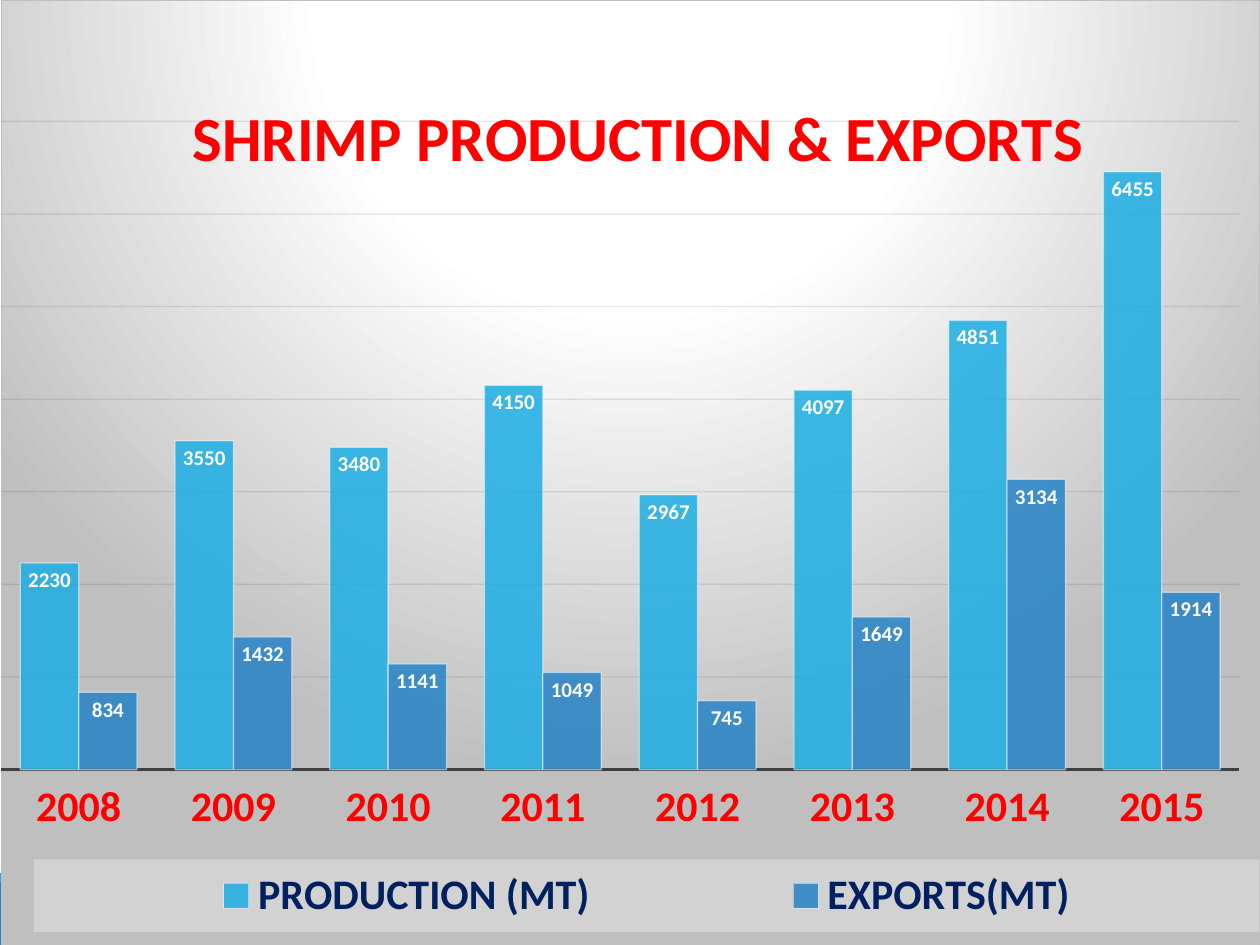
from pptx import Presentation
from pptx.chart.data import CategoryChartData
from pptx.dml.color import RGBColor
from pptx.enum.chart import (XL_CHART_TYPE, XL_LABEL_POSITION, XL_LEGEND_POSITION,
                             XL_TICK_LABEL_POSITION, XL_TICK_MARK)
from pptx.enum.shapes import MSO_SHAPE
from pptx.oxml import parse_xml
from pptx.oxml.ns import nsdecls
from pptx.util import Emu, Pt

COLUMN = XL_CHART_TYPE.COLUMN_CLUSTERED
INSIDE_END = XL_LABEL_POSITION.INSIDE_END
BOTTOM = XL_LEGEND_POSITION.BOTTOM
LOW = XL_TICK_LABEL_POSITION.LOW
NO_TICK = XL_TICK_MARK.NONE
RECTANGLE = MSO_SHAPE.RECTANGLE

BLACK = RGBColor(0x00, 0x00, 0x00)
WHITE = RGBColor(0xFF, 0xFF, 0xFF)
RED = RGBColor(0xFF, 0x00, 0x00)
NAVY = RGBColor(0x00, 0x20, 0x60)
CYAN = RGBColor(0x1C, 0xAD, 0xE4)
BLUE = RGBColor(0x26, 0x83, 0xC6)
AXIS_GRAY = RGBColor(0x40, 0x40, 0x40)
GRID_GRAY = RGBColor(0x0D, 0x0D, 0x0D)

FONT = "Calibri"
WIDTH, HEIGHT = 1260, 945
EMU_PER_INCH, PX_PER_INCH = 914400, 126
YEARS = [str(year) for year in range(2008, 2016)]
SERIES = [
    ("PRODUCTION (MT)", CYAN, [2230, 3550, 3480, 4150, 2967, 4097, 4851, 6455]),
    ("EXPORTS(MT)", BLUE, [834, 1432, 1141, 1049, 745, 1649, 3134, 1914]),
]


def px(length):
    """Turn pixels into EMU."""
    return Emu(round(length * EMU_PER_INCH / PX_PER_INCH))


def style_font(font, size, color, bold=True):
    """Set typeface, size, colour and weight."""
    font.name = FONT
    font.size = Pt(size)
    font.bold = bold
    font.color.rgb = color


def style_line(line, color, width):
    """Give a line a colour and a width in points."""
    line.color.rgb = color
    line.width = Pt(width)


def set_alpha(chart, query, percent):
    """Make the solid colours found under a query partly transparent."""
    for color in chart.element.xpath(f"{query}/a:solidFill/a:srgbClr"):
        color.append(parse_xml(f'<a:alpha {nsdecls("a")} val="{percent * 1000}"/>'))


def place_part(parent, anchor_tag, left, top, width=None, height=None, inner=False):
    """Fix the place of a chart part, given in px."""
    for layout in parent.xpath("c:layout"):
        parent.remove(layout)
    target = '<c:layoutTarget val="inner"/>' if inner else ""
    places = f'<c:x val="{left / WIDTH:.3f}"/><c:y val="{top / HEIGHT:.3f}"/>'
    if width:
        places += f'<c:w val="{width / WIDTH:.3f}"/><c:h val="{height / HEIGHT:.3f}"/>'
    parent.xpath(anchor_tag)[0].addprevious(parse_xml(
        f'<c:layout {nsdecls("c")}><c:manualLayout>{target}'
        f'<c:xMode val="edge"/><c:yMode val="edge"/>{places}'
        "</c:manualLayout></c:layout>"))


def add_bar(slide, top, height, color):
    """Add a full-width band at the foot of the slide."""
    shape = slide.shapes.add_shape(RECTANGLE, 0, px(top), px(WIDTH), px(height))
    shape.shadow.inherit = False
    shape.fill.solid()
    shape.fill.fore_color.rgb = color
    shape.line.fill.background()


def add_chart(slide):
    """Add the clustered column chart with its data."""
    data = CategoryChartData()
    data.categories = YEARS
    for name, _, values in SERIES:
        data.add_series(name, values)
    frame = slide.shapes.add_chart(COLUMN, 0, 0, px(WIDTH), px(HEIGHT), data)
    style_font(frame.chart.font, 10, BLACK, bold=False)
    return frame.chart


def style_background(chart):
    """Fill the chart area with a round gradient and a thin border."""
    stops = "".join(
        f'<a:gs pos="{position * 1000}"><a:srgbClr val="{color}"/></a:gs>'
        for position, color in ((0, "FFFFFF"), (39, "FFFFFF"), (100, "BFBFBF")))
    chart.element.xpath("c:chart")[0].addnext(parse_xml(
        f'<c:spPr {nsdecls("c", "a")}><a:gradFill><a:gsLst>{stops}</a:gsLst>'
        '<a:path path="circle">'
        '<a:fillToRect l="50000" t="-80000" r="50000" b="180000"/></a:path>'
        '</a:gradFill><a:ln w="9525"><a:solidFill><a:srgbClr val="BFBFBF"/>'
        "</a:solidFill></a:ln></c:spPr>"))


def style_title(chart):
    """Write the chart title over the plot."""
    chart.has_title = True
    run = chart.chart_title.text_frame.paragraphs[0].add_run()
    run.text = "SHRIMP PRODUCTION & EXPORTS"
    style_font(run.font, 36, RED)
    place_part(chart.element.xpath("c:chart/c:title")[0], "c:overlay", 180, 82)


def style_axes(chart):
    """Format the years, hide the values and draw faint gridlines."""
    years = chart.category_axis
    years.major_tick_mark = years.minor_tick_mark = NO_TICK
    years.tick_label_position = LOW
    style_font(years.tick_labels.font, 24, RED)
    style_line(years.format.line, AXIS_GRAY, 1.5)
    values = chart.value_axis
    values.visible = False
    values.minimum_scale, values.maximum_scale, values.major_unit = 0, 7000, 1000
    values.has_major_gridlines = True
    style_line(values.major_gridlines.format.line, GRID_GRAY, 0.75)
    set_alpha(chart, ".//c:majorGridlines/c:spPr/a:ln", 10)


def style_columns(chart):
    """Format the columns and their value labels."""
    plot = chart.plots[0]
    plot.gap_width = 65
    plot.overlap = 0
    plot.vary_by_categories = False
    for series, (_, color, _) in zip(plot.series, SERIES):
        series.format.fill.solid()
        series.format.fill.fore_color.rgb = color
        style_line(series.format.line, WHITE, 0.75)
        labels = series.data_labels
        labels.show_value = True
        labels.position = INSIDE_END
        style_font(labels.font, 12, WHITE)
    set_alpha(chart, ".//c:ser/c:spPr", 85)
    set_alpha(chart, ".//c:ser/c:spPr/a:ln", 50)
    place_part(chart.element.xpath(".//c:plotArea")[0], "c:barChart",
               0, 121, 1240, 649, inner=True)


def style_legend(chart):
    """Put the legend on a translucent band at the bottom."""
    chart.has_legend = True
    chart.legend.position = BOTTOM
    chart.legend.include_in_layout = False
    style_font(chart.legend.font, 24, NAVY)
    legend = chart.element.xpath("c:chart/c:legend")[0]
    place_part(legend, "c:overlay", 33, 860, 1227, 73)
    legend.xpath("c:overlay")[0].addnext(parse_xml(
        f'<c:spPr {nsdecls("c", "a")}><a:solidFill><a:srgbClr val="F2F2F2">'
        '<a:alpha val="39000"/></a:srgbClr></a:solidFill></c:spPr>'))


def main():
    """Build and save the slide."""
    presentation = Presentation()
    presentation.slide_width = px(WIDTH)
    presentation.slide_height = px(HEIGHT)
    slide = presentation.slides.add_slide(presentation.slide_layouts[6])
    add_bar(slide, 882, 63, BLUE)
    add_bar(slide, 873, 9, CYAN)
    chart = add_chart(slide)
    for style in (style_background, style_title, style_axes, style_columns, style_legend):
        style(chart)
    presentation.save("out.pptx")


if __name__ == "__main__":
    main()
